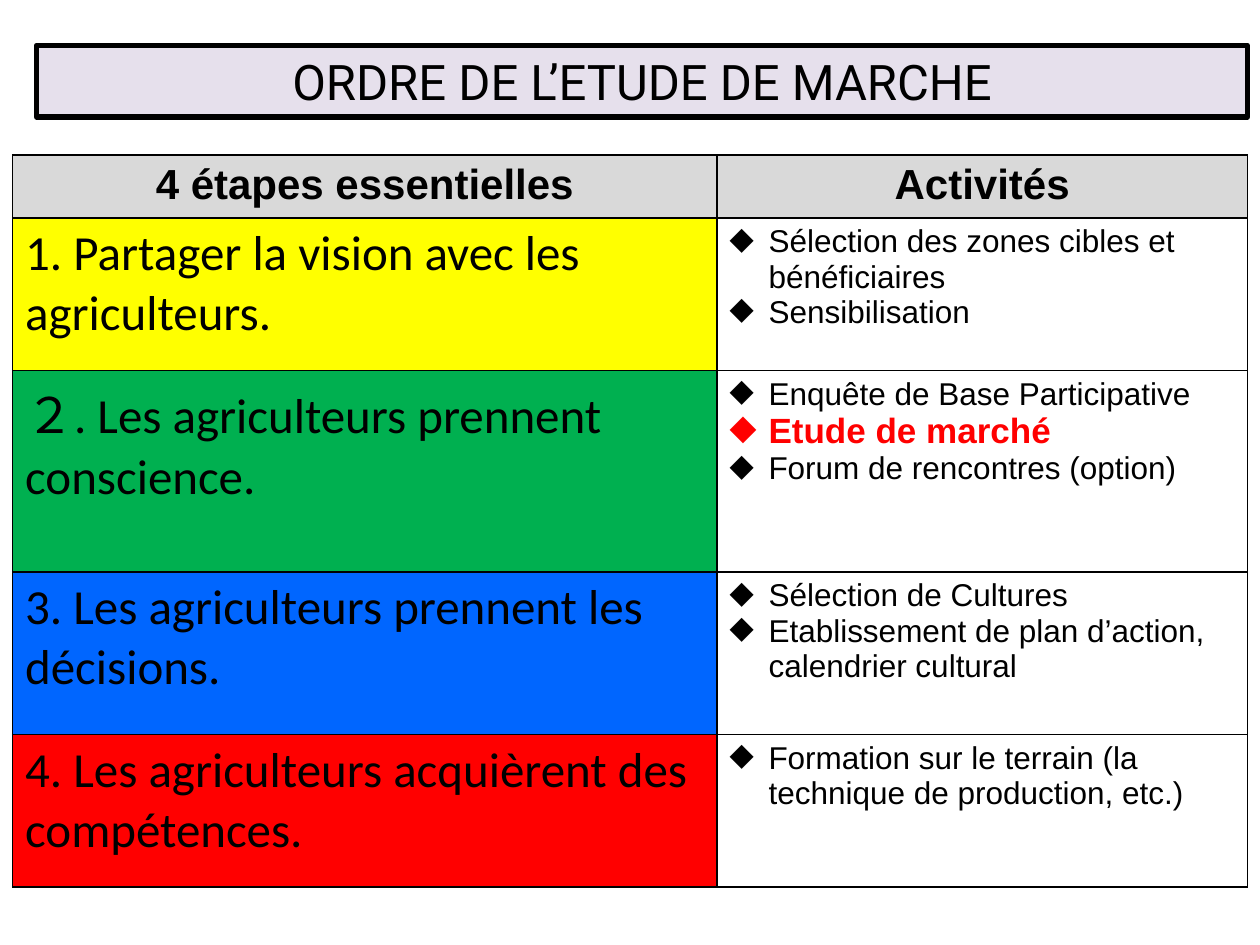
from lxml.etree import SubElement
from pptx import Presentation
from pptx.dml.color import RGBColor
from pptx.enum.text import MSO_ANCHOR, PP_ALIGN
from pptx.oxml import parse_xml
from pptx.oxml.ns import nsdecls, qn
from pptx.util import Inches, Pt

BLACK = RGBColor(0x00, 0x00, 0x00)
LAVENDER = RGBColor(0xE6, 0xE0, 0xEC)
GREY = RGBColor(0xD9, 0xD9, 0xD9)
YELLOW = RGBColor(0xFF, 0xFF, 0x00)
GREEN = RGBColor(0x00, 0xB0, 0x50)
BLUE = RGBColor(0x00, 0x66, 0xFF)
RED = RGBColor(0xFF, 0x00, 0x00)

HEADERS = ["4 étapes essentielles", "Activités"]
KEY_ACTIVITY = "Etude de marché"
STEPS = [
    ("1. Partager la vision avec les agriculteurs.", YELLOW,
     ["Sélection des zones cibles et bénéficiaires", "Sensibilisation"]),
    ("２. Les agriculteurs prennent conscience.", GREEN,
     ["Enquête de Base Participative", KEY_ACTIVITY, "Forum de rencontres (option)"]),
    ("3. Les agriculteurs prennent les décisions.", BLUE,
     ["Sélection de Cultures", "Etablissement de plan d’action, calendrier cultural"]),
    ("4. Les agriculteurs acquièrent des compétences.", RED,
     ["Formation sur le terrain (la technique de production, etc.)"]),
]
COL_WIDTHS = [5.59, 4.21]
ROW_HEIGHTS = [0.5, 1.21, 1.6, 1.29, 1.21]


def write(p, text, size=18, font="Arial", color=BLACK, bold=False, align=PP_ALIGN.LEFT, bullet=None):
    p.alignment = align
    r = p.add_run()
    r.text = text
    r.font.size = Pt(size)
    r.font.name = font
    r.font.bold = bold
    r.font.color.rgb = color
    if bullet:
        pPr = p._p.get_or_add_pPr()
        pPr.set("marL", str(Inches(0.31)))
        pPr.set("indent", str(-Inches(0.31)))
        SubElement(pPr, qn("a:buChar"), char=bullet)


def format_cell(cell, fill=None):
    """Set the fill and a 1 pt black border on all four sides."""
    if fill is None:
        cell.fill.background()
    else:
        cell.fill.solid()
        cell.fill.fore_color.rgb = fill
    tcPr = cell._tc.get_or_add_tcPr()
    for i, side in enumerate("LRTB"):
        tcPr.insert(i, parse_xml(
            f'<a:ln{side} {nsdecls("a")} w="{Pt(1)}"><a:solidFill>'
            f'<a:srgbClr val="{BLACK}"/></a:solidFill></a:ln{side}>'))


prs = Presentation()
prs.slide_width = Inches(10)
prs.slide_height = Inches(7.5)
s = prs.slides.add_slide(prs.slide_layouts[5])

# Table of steps and activities
table = s.shapes.add_table(len(ROW_HEIGHTS), len(COL_WIDTHS), Inches(0.1), Inches(1.23),
                           Inches(sum(COL_WIDTHS)), Inches(sum(ROW_HEIGHTS))).table
for col, width in zip(table.columns, COL_WIDTHS):
    col.width = Inches(width)
for row, height in zip(table.rows, ROW_HEIGHTS):
    row.height = Inches(height)

for c, header in enumerate(HEADERS):
    cell = table.cell(0, c)
    format_cell(cell, GREY)
    write(cell.text_frame.paragraphs[0], header, size=24, bold=True, align=PP_ALIGN.CENTER)

for i, (step, color, activities) in enumerate(STEPS, start=1):
    step_cell, activity_cell = table.cell(i, 0), table.cell(i, 1)
    format_cell(step_cell, color)
    write(step_cell.text_frame.paragraphs[0], step, size=28, font="Calibri")
    format_cell(activity_cell)
    tf = activity_cell.text_frame
    for n, activity in enumerate(activities):
        p = tf.paragraphs[0] if n == 0 else tf.add_paragraph()
        key = activity == KEY_ACTIVITY
        write(p, activity, size=20 if key else 18, color=RED if key else BLACK,
              bold=key, bullet="◆")

# Title banner
title = s.shapes.title
title.left, title.top = Inches(0.29), Inches(0.36)
title.width, title.height = Inches(9.61), Inches(0.57)
title.fill.solid()
title.fill.fore_color.rgb = LAVENDER
title.line.color.rgb = BLACK
title.line.width = Pt(3)
title.text_frame.vertical_anchor = MSO_ANCHOR.MIDDLE
write(title.text_frame.paragraphs[0], "ORDRE DE L’ETUDE DE MARCHE", size=28,
      font="Roboto", align=PP_ALIGN.CENTER)

prs.save("out.pptx")
